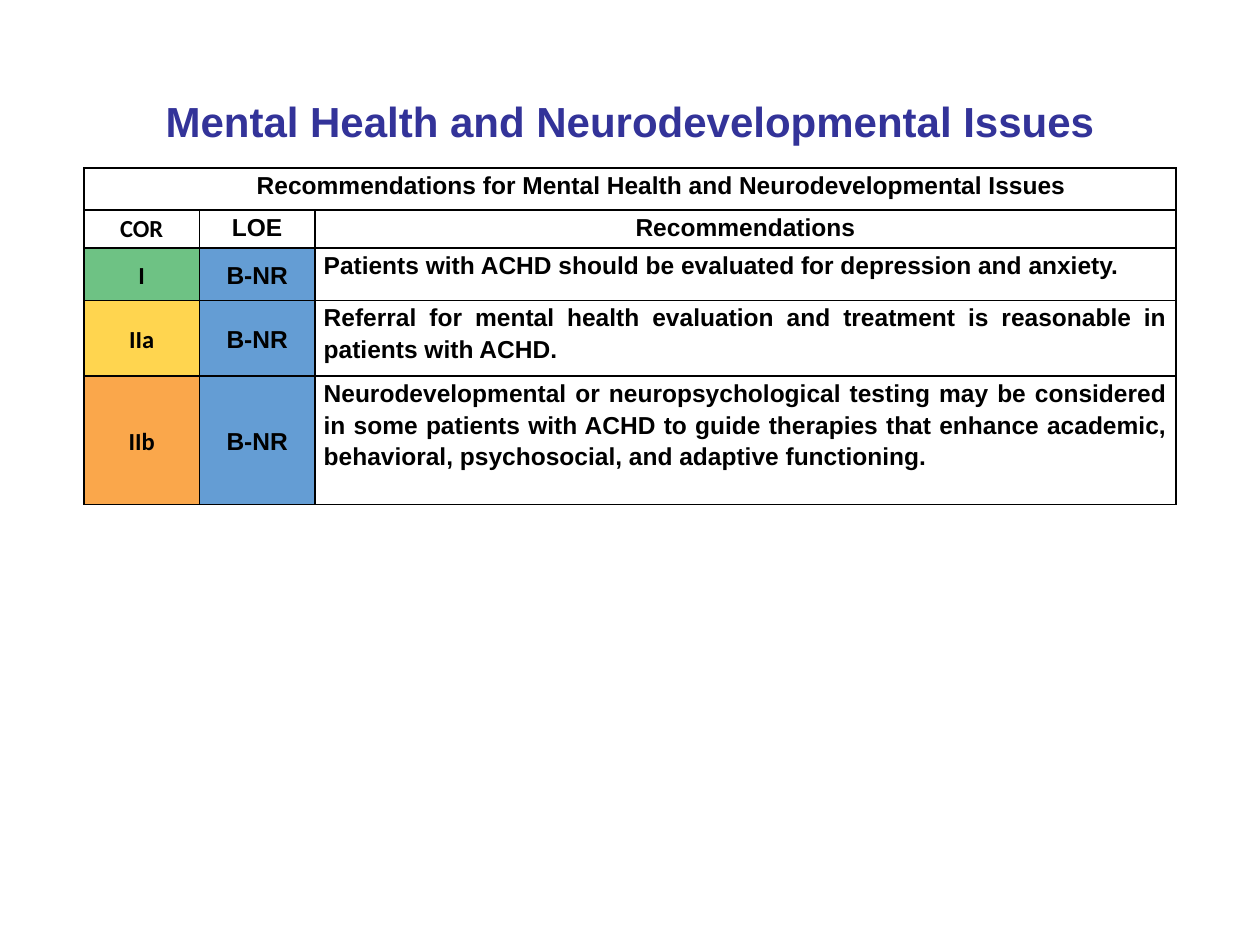
from dataclasses import dataclass

from lxml.etree import SubElement
from pptx import Presentation
from pptx.dml.color import RGBColor
from pptx.enum.text import MSO_ANCHOR, PP_ALIGN
from pptx.oxml.ns import qn
from pptx.util import Pt


@dataclass(frozen=True)
class Theme:
    title: str = "333399"
    ink: str = "000000"
    evidence: str = "649DD4"
    font: str = "Arial"
    class_font: str = "Calibri"
    title_size: int = 24
    table_size: int = 14
    border: int = 1


THEME = Theme()
HEADING = "\tRecommendations for Mental Health and Neurodevelopmental Issues"
COLUMN_NAMES = ("COR", "LOE", "Recommendations")
COLUMN_WIDTHS = (66, 66, 492)
ROW_HEIGHTS = (24, 21.6, 30, 43.4, 73.2)
RECOMMENDATIONS = (
    ("I", "6EC284", "B-NR",
     "Patients with ACHD should be evaluated for depression and anxiety."),
    ("IIa", "FFD54F", "B-NR",
     "Referral for mental health evaluation and treatment is reasonable in "
     "patients with ACHD."),
    ("IIb", "FAA74B", "B-NR",
     "Neurodevelopmental or neuropsychological testing may be considered in "
     "some patients with ACHD to guide therapies that enhance academic, "
     "behavioral, psychosocial, and adaptive functioning."),
)


def write(frame, text, size, color, font=THEME.font, align=PP_ALIGN.CENTER):
    frame.text = text
    frame.word_wrap = True
    paragraph = frame.paragraphs[0]
    paragraph.alignment = align
    for run in paragraph.runs:
        run.font.name = font
        run.font.size = Pt(size)
        run.font.bold = True
        run.font.color.rgb = RGBColor.from_string(color)
    return paragraph


def add_title(slide, text):
    title = slide.shapes.add_textbox(Pt(36), Pt(24), Pt(648), Pt(90))
    title.text_frame.vertical_anchor = MSO_ANCHOR.MIDDLE
    write(title.text_frame, text, THEME.title_size, THEME.title)


def draw_borders(cell):
    properties = cell._tc.get_or_add_tcPr()
    for position, side in enumerate(("a:lnL", "a:lnR", "a:lnT", "a:lnB")):
        line = SubElement(properties, qn(side), w=str(Pt(THEME.border)))
        fill = SubElement(line, qn("a:solidFill"))
        SubElement(fill, qn("a:srgbClr"), val=THEME.ink)
        properties.insert(position, line)


def fill_cell(cell, text, fill=None, font=THEME.font, align=PP_ALIGN.CENTER):
    cell.margin_left = cell.margin_right = Pt(5)
    cell.margin_top = cell.margin_bottom = Pt(0)
    paragraph = write(cell.text_frame, text, THEME.table_size, THEME.ink,
                      font, align)
    paragraph.line_spacing = 1.15
    if fill:
        cell.fill.solid()
        cell.fill.fore_color.rgb = RGBColor.from_string(fill)
        cell.vertical_anchor = MSO_ANCHOR.MIDDLE
    else:
        cell.fill.background()


def add_recommendations(slide):
    table = slide.shapes.add_table(
        len(ROW_HEIGHTS), len(COLUMN_WIDTHS), Pt(48), Pt(96),
        Pt(sum(COLUMN_WIDTHS)), Pt(sum(ROW_HEIGHTS))).table
    table.first_row = table.horz_banding = False
    for column, width in zip(table.columns, COLUMN_WIDTHS):
        column.width = Pt(width)
    for row, height in zip(table.rows, ROW_HEIGHTS):
        row.height = Pt(height)

    table.cell(0, 0).merge(table.cell(0, 2))
    fill_cell(table.cell(0, 0), HEADING)
    fonts = (THEME.class_font, THEME.font, THEME.font)
    for column, (name, font) in enumerate(zip(COLUMN_NAMES, fonts)):
        fill_cell(table.cell(1, column), name, font=font)
    for row, (grade, color, evidence, advice) in enumerate(RECOMMENDATIONS, 2):
        fill_cell(table.cell(row, 0), grade, color, THEME.class_font)
        fill_cell(table.cell(row, 1), evidence, THEME.evidence)
        fill_cell(table.cell(row, 2), advice, align=PP_ALIGN.JUSTIFY)
    for cell in table.iter_cells():
        draw_borders(cell)


def main():
    deck = Presentation()
    deck.slide_width, deck.slide_height = Pt(720), Pt(540)
    slide = deck.slides.add_slide(deck.slide_layouts[6])
    add_title(slide, "Mental Health and Neurodevelopmental Issues")
    add_recommendations(slide)
    deck.save("out.pptx")


if __name__ == "__main__":
    main()
